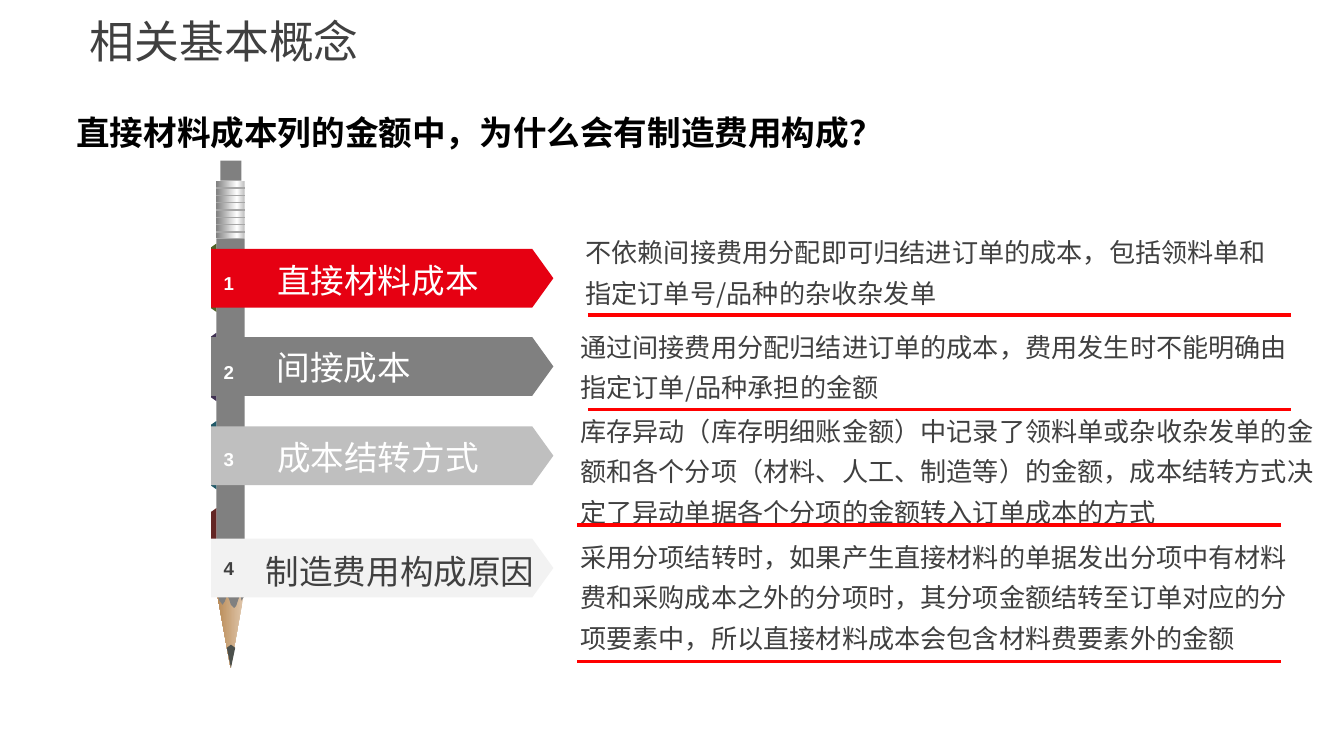
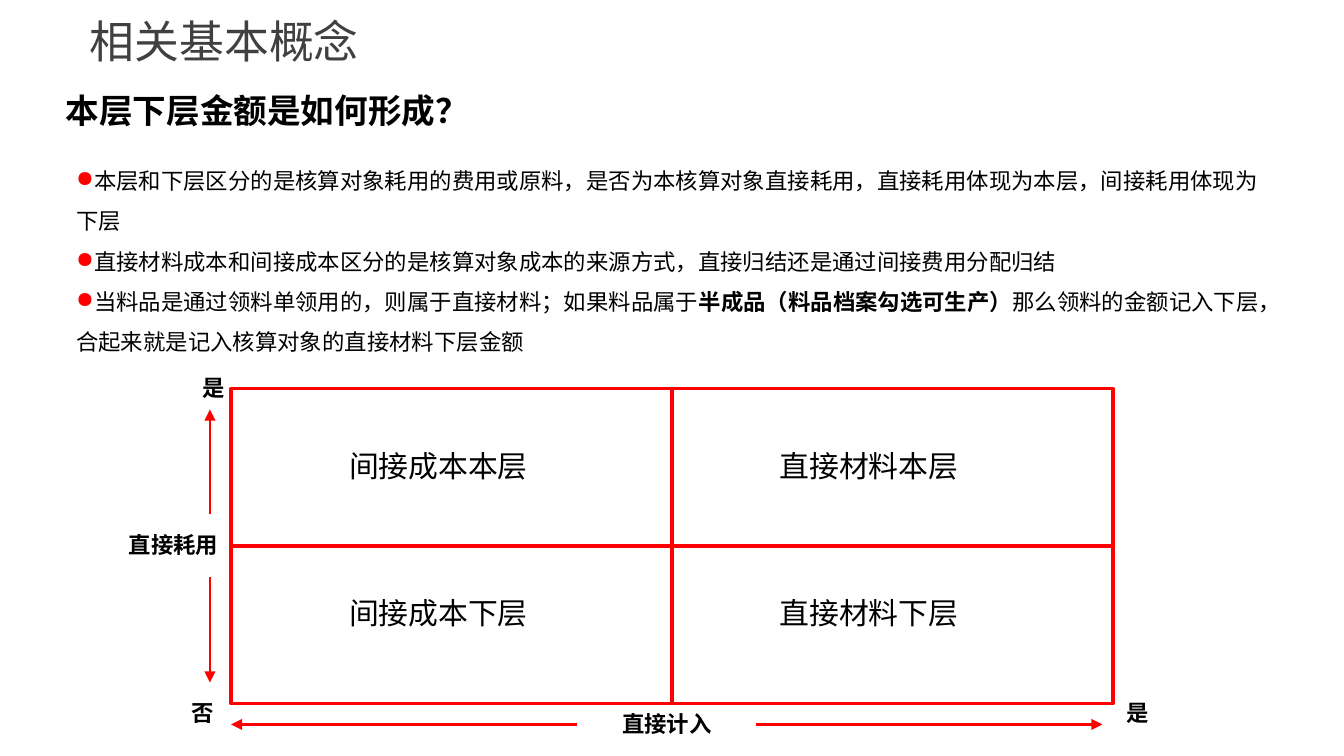
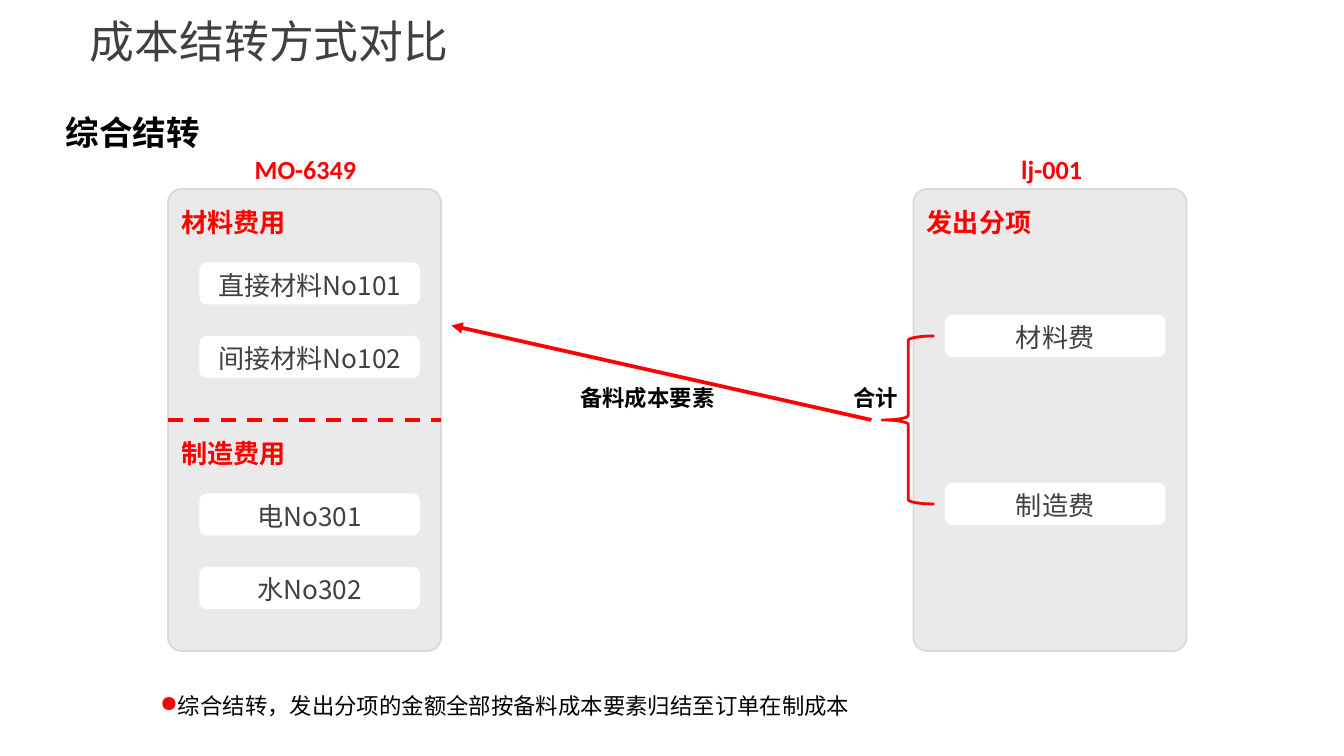
from dataclasses import dataclass

import pptx
import pptx.dml.color
import pptx.enum.dml
import pptx.enum.shapes
import pptx.enum.text
import pptx.oxml
import pptx.oxml.ns
import pptx.util

PX = 914400 / 128
SHAPE = pptx.enum.shapes.MSO_SHAPE
ALIGN = pptx.enum.text.PP_ALIGN
ANCHOR = pptx.enum.text.MSO_ANCHOR
qn = pptx.oxml.ns.qn


@dataclass(frozen=True)
class Theme:
    latin: str = "Calibri"
    cjk: str = "Noto Sans CJK SC"
    number_font: str = "Arial"
    black: str = "000000"
    dark: str = "404040"
    white: str = "FFFFFF"
    red: str = "FF0000"
    crimson: str = "E60012"
    gray: str = "808080"
    silver: str = "BFBFBF"
    pale: str = "F2F2F2"
    panel: str = "D9D9D9"
    groove: str = "A6A6A6"
    lead: str = "4C504C"
    wood: tuple = ((0, "E1C9AF"), (100, "B88954"))
    metal: tuple = ((0, "BFBFBF"), (27, "FFFFFF"), (100, "808080"))
    title: int = 24
    heading: int = 18
    cell: int = 16
    body: int = 14
    small: int = 12
    tiny: int = 10


T = Theme()


def px(n):
    return pptx.util.Emu(round(n * PX))


def box_px(*lengths):
    return [px(n) for n in lengths]


def rgb(color):
    return pptx.dml.color.RGBColor.from_string(color)


def add_xml(parent, tag, **attrs):
    el = pptx.oxml.parse_xml(f"<a:{tag} {pptx.oxml.ns.nsdecls('a')}/>")
    for name, value in attrs.items():
        el.set(name, str(value))
    parent.append(el)
    return el


def write(sp, text, size=T.body, color=T.black, font=T.latin, bold=False, align=None,
          spacing=None, bullet=False, wrap=True, anchor=ANCHOR.TOP, insets=None):
    """Fill a shape: one paragraph per line, with **bold** passages."""
    tf = sp.text_frame
    tf.word_wrap = wrap
    tf.vertical_anchor = anchor
    if insets:
        (tf.margin_left, tf.margin_top,
         tf.margin_right, tf.margin_bottom) = box_px(*insets)
    for i, line in enumerate(text.split("\n")):
        p = tf.add_paragraph() if i else tf.paragraphs[0]
        if bullet:
            pPr = p._p.get_or_add_pPr()
            add_xml(add_xml(pPr, "buClr"), "srgbClr", val=T.red)
            add_xml(pPr, "buChar", char="●")
        if align is not None:
            p.alignment = align
        if spacing:
            p.line_spacing = spacing
        for j, part in enumerate(line.split("**")):
            r = p.add_run()
            r.text = part
            r.font.size = pptx.util.Pt(size)
            r.font.name = font
            r.font.bold = bold or j % 2 == 1
            r.font.color.rgb = rgb(color)
            add_xml(r._r.get_or_add_rPr(), "ea", typeface=T.cjk)


def add_text(slide, text, x, y, w, h, **fmt):
    write(slide.shapes.add_textbox(*box_px(x, y, w, h)), text, **fmt)


def paint(sp, fill=None, line=None, width=1):
    sp.shadow.inherit = False
    if fill:
        sp.fill.solid()
        sp.fill.fore_color.rgb = rgb(fill)
    else:
        sp.fill.background()
    if line:
        sp.line.color.rgb = rgb(line)
        sp.line.width = pptx.util.Pt(width)
    else:
        sp.line.fill.background()


def add_shape(slide, kind, x, y, w, h, adj=None, rotation=0, **look):
    sp = slide.shapes.add_shape(kind, *box_px(x, y, w, h))
    if adj is not None:
        sp.adjustments[0] = adj
    sp.rotation = rotation
    paint(sp, **look)
    return sp


def add_outline(slide, points, fill):
    builder = slide.shapes.build_freeform(*points[0], scale=PX)
    builder.add_line_segments(points[1:], close=True)
    paint(builder.convert_to_shape(), fill)


def set_gradient(sp, stops, angle):
    sp.fill.gradient()
    sp.fill.gradient_angle = angle
    gs_list = sp._element.spPr.find(".//" + qn("a:gsLst"))
    for gs in list(gs_list):
        gs_list.remove(gs)
    for percent, color in stops:
        gs = add_xml(gs_list, "gs", pos=percent * 1000)
        add_xml(gs, "srgbClr", val=color)


def add_line(slide, x1, y1, x2, y2, color=T.red, width=2, dash=False, arrow=False):
    ln = slide.shapes.add_connector(
        pptx.enum.shapes.MSO_CONNECTOR.STRAIGHT, *box_px(x1, y1, x2, y2))
    ln.line.color.rgb = rgb(color)
    ln.line.width = pptx.util.Pt(width)
    if dash:
        ln.line.dash_style = pptx.enum.dml.MSO_LINE.DASH
    if arrow:
        add_xml(ln.line._get_or_add_ln(), "tailEnd", type="triangle")
    add_xml(ln._element.spPr, "effectLst")


def add_slide(prs, title, heading, x, y, w):
    slide = prs.slides.add_slide(prs.slide_layouts[6])
    add_text(slide, title, 73, 4, 1152, 70, size=T.title, color=T.dark,
             font=T.cjk, anchor=ANCHOR.MIDDLE)
    add_text(slide, heading, x, y, w, 51, size=T.heading, bold=True)
    return slide


def add_pencil(slide):
    tip = add_shape(slide, SHAPE.PENTAGON, 182, 585, 75, 27, adj=2.82, rotation=90)
    set_gradient(tip, T.wood, 270)
    add_outline(slide, [(206, 227), (233, 227), (233, 561), (232, 569), (230, 572),
                        (229, 566), (227, 571), (225, 577), (223, 579), (220, 576),
                        (218, 570), (216, 568), (214, 573), (212, 576), (209, 572),
                        (206, 563)], T.gray)
    ferrule = add_shape(slide, SHAPE.RECTANGLE, 206, 172, 27, 55)
    set_gradient(ferrule, T.metal, 180)
    add_shape(slide, SHAPE.RECTANGLE, 210, 153, 20, 19, fill=T.gray)
    add_outline(slide, [(220, 614), (224, 617), (220, 636), (216, 617)], T.lead)
    for i in range(7):
        add_line(slide, 206, 179 + 7 * i, 233, 179 + 7 * i, T.groove, 0.75)


def add_chip(slide, text, x, y):
    sp = add_shape(slide, SHAPE.ROUNDED_RECTANGLE, x, y, 210, 40, fill=T.white)
    write(sp, text, color=T.dark, font=T.cjk, align=ALIGN.CENTER,
          anchor=ANCHOR.MIDDLE, insets=(4, 8, 4, 5))


def add_panel(slide, x, name, name_x, name_w, groups, chips):
    """Draw a rounded panel; groups and chips are (text, y) pairs."""
    sp = add_shape(slide, SHAPE.ROUNDED_RECTANGLE, x, 180, 260, 440, adj=0.05,
                   fill=T.panel, line=T.panel)
    fill_color = sp._element.spPr.find(qn("a:solidFill"))[0]
    add_xml(fill_color, "alpha", val=55000)
    red_bold = dict(color=T.red, bold=True)
    add_text(slide, name, name_x, 140, name_w, 43, **red_bold)
    for text, y in groups:
        add_text(slide, text, x, y, 160, 43, **red_bold)
    for text, y in chips:
        add_chip(slide, text, x + 30, y)


def concept_slide(prs):
    slide = add_slide(prs, "相关基本概念",
                      "直接材料成本列的金额中，为什么会有制造费用构成？", 60, 100, 810)
    add_pencil(slide)
    for y, color in ((514, "632523"), (431, "215968"), (347, "403152"), (262, "4F6228")):
        add_shape(slide, SHAPE.TRAPEZOID, 171, y, 65, 5, adj=0.7, rotation=270, fill=color)

    # arrow y, fill, text colour, number y, label (text, x, y, w)
    tags = (
        (237, T.crimson, T.white, 248, ("直接材料成本", 250, 241, 220)),
        (321, T.gray, T.white, 333, ("间接成本", 250, 324, 155)),
        (406, T.silver, T.white, 416, ("成本结转方式", 250, 410, 220)),
        (513, T.pale, T.dark, 520, ("制造费用构成原因", 239, 518, 284)),
    )
    for i, (y, fill, color, number_y, (label, x, label_y, w)) in enumerate(tags, 1):
        add_shape(slide, SHAPE.PENTAGON, 201, y, 326, 56, adj=0.36, fill=fill)
        add_text(slide, str(i), 200, number_y, 36, 38, size=T.tiny, color=color, bold=True,
                 font=T.number_font, align=ALIGN.CENTER, spacing=1.2, wrap=False)
        add_text(slide, label, x, label_y, w, 51, size=T.heading, color=color,
                 font=T.cjk, align=ALIGN.CENTER, wrap=False)

    # text, box (x, y, w, h), rule (x, y)
    notes = (
        ("不依赖间接费用分配即可归结进订单的成本，包括领料单和指定订单号/品种的杂收杂发单",
         (545, 210, 685, 91), (560, 300)),
        ("通过间接费用分配归结进订单的成本，费用发生时不能明确由指定订单/品种承担的金额",
         (540, 300, 700, 91), (560, 390)),
        ("库存异动（库存明细账金额）中记录了领料单或杂收杂发单的金额和各个分项（材料、人工、"
         "制造等）的金额，成本结转方式决定了异动单据各个分项的金额转入订单成本的方式",
         (540, 380, 740, 131), (550, 500)),
        ("采用分项结转时，如果产生直接材料的单据发出分项中有材料费和采购成本之外的分项时，"
         "其分项金额结转至订单对应的分项要素中，所以直接材料成本会包含材料费要素外的金额",
         (540, 500, 700, 131), (550, 630)),
    )
    for text, box, (x, y) in notes:
        add_text(slide, text, *box, color=T.dark, font=T.cjk, spacing=1.3)
        add_line(slide, x, y, x + 670, y)


def matrix_slide(prs):
    slide = add_slide(prs, "相关基本概念", "本层下层金额是如何形成？", 50, 79, 810)
    add_text(slide,
             "本层和下层区分的是核算对象耗用的费用或原料，是否为本核算对象直接耗用，"
             "直接耗用体现为本层，间接耗用体现为下层\n"
             "直接材料成本和间接成本区分的是核算对象成本的来源方式，"
             "直接归结还是通过间接费用分配归结\n"
             "当料品是通过领料单领用的，则属于直接材料；如果料品属于"
             "**半成品（料品档案勾选可生产）**"
             "那么领料的金额记入下层，合起来就是记入核算对象的直接材料下层金额",
             60, 140, 1170, 207, size=T.small, spacing=1.5, bullet=True)

    x, y, w, h = 220, 370, 840, 300
    add_shape(slide, SHAPE.RECTANGLE, x, y, w, h, line=T.red, width=2)
    add_line(slide, x + w // 2, y, x + w // 2, y + h)
    add_line(slide, x, y + h // 2, x + w, y + h // 2)
    for kind, cell_x in (("间接成本", 320), ("直接材料", 730)):
        for layer, cell_y in (("本层", 420), ("下层", 560)):
            add_text(slide, kind + layer, cell_x, cell_y, 220, 47, size=T.cell)

    for ends in ((550, 690, 220, 690), (720, 690, 1050, 690),
                 (200, 490, 200, 390), (200, 550, 200, 650)):
        add_line(slide, *ends, width=1.5, arrow=True)
    for text, x, y, w in (("直接计入", 580, 670, 130), ("否", 170, 660, 50),
                          ("是", 1060, 660, 50), ("是", 180, 350, 50),
                          ("直接耗用", 110, 500, 130)):
        add_text(slide, text, x, y, w, 38, size=T.small, bold=True)


def carryover_slide(prs):
    slide = add_slide(prs, "成本结转方式对比", "综合结转", 50, 100, 1150)
    add_panel(slide, 160, "MO-6349", 230, 140,
              (("材料费用", 190), ("制造费用", 410)),
              (("直接材料No101", 250), ("间接材料No102", 320),
               ("电No301", 470), ("水No302", 540)))
    add_line(slide, 160, 400, 420, 400, dash=True)
    add_panel(slide, 870, "lj-001", 960, 100, (("发出分项", 190),),
              (("材料费", 300), ("制造费", 460)))
    add_shape(slide, SHAPE.LEFT_BRACE, 840, 320, 50, 160, line=T.red, width=1.5)
    add_line(slide, 830, 400, 430, 310, arrow=True)
    for text, x, w in (("合计", 800, 70), ("备料成本要素", 540, 160)):
        add_text(slide, text, x, 360, w, 38, size=T.small, bold=True)
    add_text(slide, "综合结转，发出分项的金额全部按备料成本要素归结至订单在制成本",
             140, 640, 990, 51, size=T.small, spacing=1.5, bullet=True)


def main():
    prs = pptx.Presentation()
    prs.slide_width, prs.slide_height = box_px(1280, 720)
    concept_slide(prs)
    matrix_slide(prs)
    carryover_slide(prs)
    prs.save("out.pptx")


if __name__ == "__main__":
    main()
